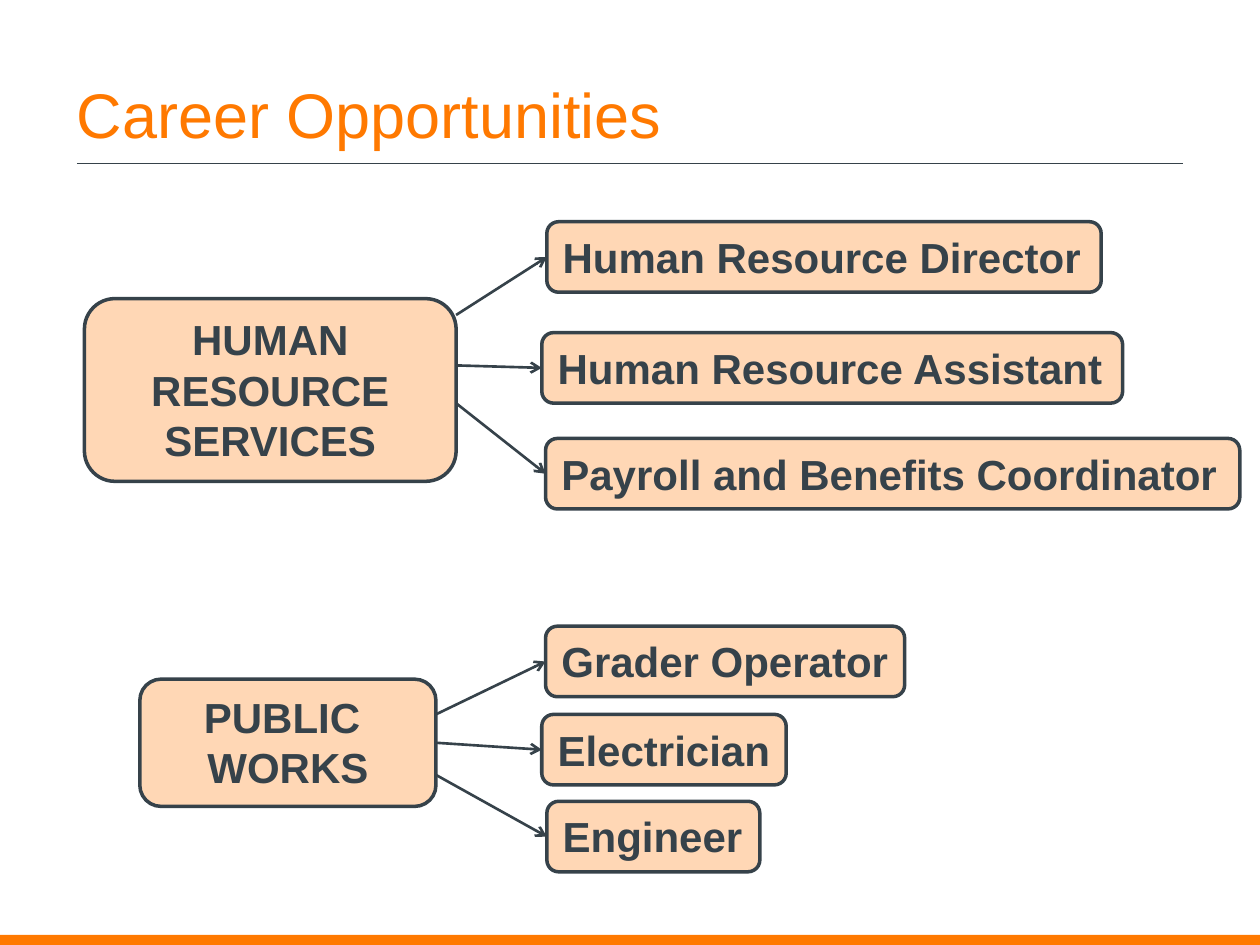
import pptx
import pptx.util
import pptx.dml.color
import pptx.enum.shapes
import pptx.enum.text
import pptx.oxml.ns
from lxml import etree

Inches = pptx.util.Inches
Pt = pptx.util.Pt
RGBColor = pptx.dml.color.RGBColor
MSO_SHAPE = pptx.enum.shapes.MSO_SHAPE
PP_ALIGN = pptx.enum.text.PP_ALIGN
MSO_ANCHOR = pptx.enum.text.MSO_ANCHOR
qn = pptx.oxml.ns.qn

ORANGE = RGBColor(0xFF, 0x79, 0x00)
PEACH = RGBColor(0xFF, 0xD7, 0xB5)
SLATE = RGBColor(0x36, 0x42, 0x4A)
JOB_HEIGHT = 0.56

presentation = pptx.Presentation()
presentation.slide_width = Inches(10)
presentation.slide_height = Inches(7.5)
slide = presentation.slides.add_slide(presentation.slide_layouts[6])


def add_box(left, top, width, height, text, alignment, wrap):
    box = slide.shapes.add_shape(
        MSO_SHAPE.ROUNDED_RECTANGLE, Inches(left), Inches(top), Inches(width), Inches(height)
    )
    box.shadow.inherit = False
    box.fill.solid()
    box.fill.fore_color.rgb = PEACH
    box.line.color.rgb = SLATE
    box.line.width = Pt(2)
    text_frame = box.text_frame
    text_frame.word_wrap = wrap
    text_frame.vertical_anchor = MSO_ANCHOR.TOP
    text_frame.auto_size = pptx.enum.text.MSO_AUTO_SIZE.SHAPE_TO_FIT_TEXT
    text_frame.text = text
    for paragraph in text_frame.paragraphs:
        paragraph.alignment = alignment
        font = paragraph.runs[0].font
        font.name = "Arial"
        font.size = Pt(24)
        font.bold = True
        font.color.rgb = SLATE
    return box


def add_line(start_x, start_y, end_x, end_y, width):
    line = slide.shapes.add_connector(
        pptx.enum.shapes.MSO_CONNECTOR.STRAIGHT,
        Inches(start_x), Inches(start_y), Inches(end_x), Inches(end_y),
    )
    line.line.color.rgb = SLATE
    line.line.width = Pt(width)
    etree.SubElement(line._element.spPr, qn("a:effectLst"))
    return line


footer_bar = slide.shapes.add_shape(
    MSO_SHAPE.RECTANGLE, 0, Inches(7.42), Inches(10), Inches(0.08)
)
footer_bar.shadow.inherit = False
footer_bar.fill.solid()
footer_bar.fill.fore_color.rgb = ORANGE
footer_bar.line.fill.background()

add_line(0.61, 1.3, 9.39, 1.3, 0.75)

title = slide.shapes.add_textbox(Inches(0.51), Inches(0.25), Inches(8.99), Inches(1))
title.text_frame.word_wrap = True
title.text_frame.vertical_anchor = MSO_ANCHOR.BOTTOM
title.text_frame.text = "Career Opportunities"
title_font = title.text_frame.paragraphs[0].runs[0].font
title_font.name = "Arial"
title_font.size = Pt(36)
title_font.color.rgb = ORANGE

departments = [
    ("HUMAN RESOURCE SERVICES", 0.67, 2.37, 2.95, 1.45, [
        ("Human Resource Director", 4.34, 1.76, 4.4, 2.5),
        ("Human Resource Assistant", 4.3, 2.64, 4.61, 2.9),
        ("Payroll and Benefits Coordinator", 4.33, 3.48, 5.51, 3.2),
    ]),
    ("PUBLIC \nWORKS", 1.11, 5.39, 2.35, 1.01, [
        ("Grader Operator", 4.33, 4.97, 2.85, 5.67),
        ("Electrician", 4.3, 5.67, 1.94, 5.89),
        ("Engineer", 4.34, 6.36, 1.69, 6.15),
    ]),
]

for name, left, top, width, height, jobs in departments:
    department_box = add_box(left, top, width, height, name, PP_ALIGN.CENTER, True)
    for job, job_left, job_top, job_width, start_y in jobs:
        job_box = add_box(job_left, job_top, job_width, JOB_HEIGHT, job, PP_ALIGN.LEFT, False)
        arrow = add_line(left + width, start_y, job_left, job_top + JOB_HEIGHT / 2, 1.5)
        etree.SubElement(arrow.line._get_or_add_ln(), qn("a:tailEnd"), type="arrow")
        arrow.end_connect(job_box, 1)
        if abs(start_y - top - height / 2) < 0.01:
            arrow.begin_connect(department_box, 3)

presentation.save("out.pptx")
